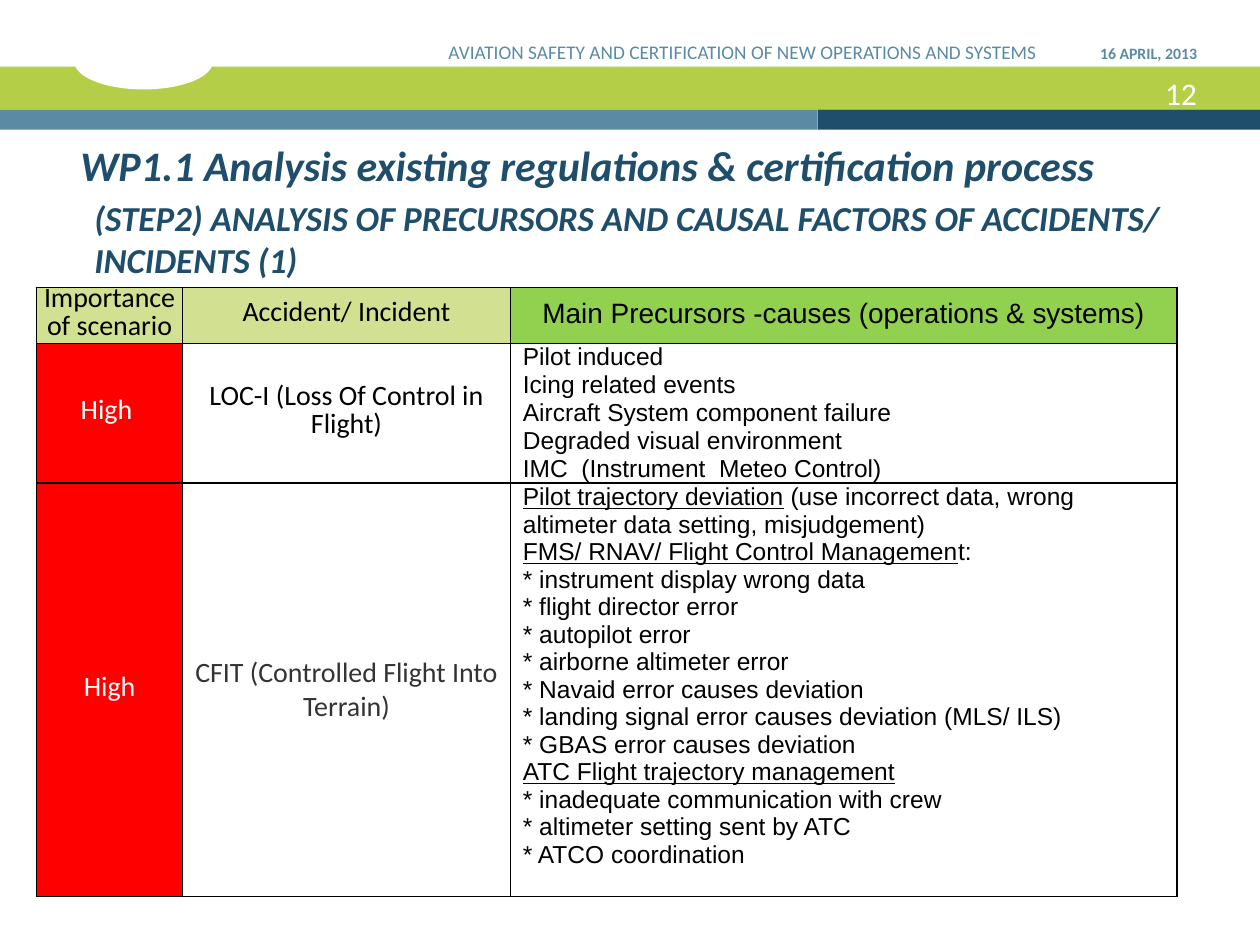
from lxml.etree import SubElement
from pptx import Presentation
from pptx.dml.color import RGBColor
from pptx.enum.shapes import MSO_SHAPE
from pptx.enum.text import MSO_ANCHOR, PP_ALIGN
from pptx.oxml.ns import qn
from pptx.util import Inches, Pt

THEME = {
    "colors": {"lime": "B5CE48", "navy": "1E4E6B", "steel": "5B8AA5", "white": "FFFFFF",
               "pale": "D2E191", "green": "92D050", "red": "FF0000", "black": "000000",
               "grey": "333333"},
    "styles": {
        "title": {"size": 24, "name": "Calibri", "color": "navy", "bold": True, "italic": True},
        "subtitle": {"size": 20, "name": "Calibri", "color": "navy", "bold": True, "italic": True},
        "number": {"size": 18, "name": "Calibri", "color": "white"},
        "date": {"size": 9, "name": "Calibri", "color": "steel", "bold": True},
        "event": {"size": 11, "name": "Calibri", "color": "steel"},
        "label": {"size": 16, "name": "Calibri", "color": "black"},
        "heading": {"size": 16, "name": "Arial", "color": "black"},
        "rating": {"size": 16, "name": "Calibri", "color": "white"},
        "muted": {"size": 16, "name": "Calibri", "color": "grey"},
        "cause": {"size": 14, "name": "Arial", "color": "black"},
        "topic": {"size": 14, "name": "Arial", "color": "black", "underline": True},
    },
}

BANDS = [
    (MSO_SHAPE.RECTANGLE, "lime", (0, 0.53, 10, 0.34)),
    (MSO_SHAPE.RECTANGLE, "navy", (6.49, 0.87, 3.51, 0.16)),
    (MSO_SHAPE.RECTANGLE, "steel", (0, 0.87, 6.49, 0.16)),
    (MSO_SHAPE.OVAL, "white", (0.59, 0.27, 1.1, 0.44)),
]

HEADER_FRAME = {"vertical_anchor": MSO_ANCHOR.BOTTOM, "margin_right": 0}
TEXTS = [
    ("WP1.1 Analysis existing regulations & certification process", "title",
     (0.54, 1.11, 9, 0.45), PP_ALIGN.LEFT, {"vertical_anchor": MSO_ANCHOR.BOTTOM}),
    ("12", "number", (8.67, 0.54, 0.83, 0.4), PP_ALIGN.RIGHT, HEADER_FRAME),
    ("16 APRIL, 2013", "date", (8.31, 0.05, 1.19, 0.5), PP_ALIGN.RIGHT, HEADER_FRAME),
    ("AVIATION SAFETY AND CERTIFICATION OF NEW OPERATIONS AND SYSTEMS", "event",
     (2.95, 0.05, 5.28, 0.5), PP_ALIGN.RIGHT, HEADER_FRAME),
    ("(STEP2) ANALYSIS OF PRECURSORS AND CAUSAL FACTORS OF ACCIDENTS/ INCIDENTS (1)",
     "subtitle", (0.65, 1.51, 8.78, 0.77), PP_ALIGN.LEFT, {}),
]

LOSS_CAUSES = """Pilot induced
Icing related events
Aircraft System component failure
Degraded visual environment
IMC  (Instrument  Meteo Control)"""
FLIGHT_CAUSES = """t:
* instrument display wrong data
* flight director error
* autopilot error
* airborne altimeter error
* Navaid error causes deviation
* landing signal error causes deviation (MLS/ ILS)
* GBAS error causes deviation"""
CONTROL_CAUSES = """* inadequate communication with crew
* altimeter setting sent by ATC
* ATCO coordination"""

TABLE_AT = (0.29, 2.28)
COLUMNS = [1.16, 2.6, 5.29]
ROWS = [0.44, 1.11, 3.28]
CENTRED = {"alignment": PP_ALIGN.CENTER, "line_spacing": Pt(16)}
CELLS = [
    [("pale", CENTRED, [[("Importance of scenario", "label")]]),
     ("pale", CENTRED, [[("Accident/ Incident", "label")]]),
     ("green", CENTRED, [[("Main Precursors -causes (operations & systems)", "heading")]])],
    [("red", CENTRED, [[("High ", "rating")]]),
     (None, CENTRED, [[("LOC-I (Loss Of Control in Flight)", "label")]]),
     (None, {"line_spacing": Pt(16)}, [[(LOSS_CAUSES, "cause")]])],
    [("red", CENTRED, [[("High", "rating")]]),
     (None, {"alignment": PP_ALIGN.CENTER},
      [[("CFIT (Controlled Flight Into Terrain)", "muted")]]),
     (None, {}, [
         [("Pilot trajectory deviation", "topic"),
          (" (use incorrect data, wrong altimeter data setting, misjudgement)\n", "cause"),
          ("FMS/ RNAV/ Flight Control Managemen", "topic"),
          (FLIGHT_CAUSES, "cause")],
         [("ATC Flight trajectory management\n", "topic"),
          (CONTROL_CAUSES, "cause")]])],
]


def color_of(name):
    return RGBColor.from_string(THEME["colors"][name])


def apply(target, values):
    for name, value in values.items():
        setattr(target, name, value)


def write_spans(para, text, style):
    values = dict(THEME["styles"][style])
    color = color_of(values.pop("color"))
    values["size"] = Pt(values["size"])
    for index, line in enumerate(text.split("\n")):
        if index:
            para.add_line_break()
        if line:
            span = para.add_run()
            span.text = line
            apply(span.font, values)
            span.font.color.rgb = color


def add_band(page, kind, color, place):
    band = page.shapes.add_shape(kind, *map(Inches, place))
    band.shadow.inherit = False
    band.fill.solid()
    band.fill.fore_color.rgb = color_of(color)
    band.line.fill.background()


def add_text(page, text, style, place, alignment, frame):
    box = page.shapes.add_textbox(*map(Inches, place))
    apply(box.text_frame, {"word_wrap": True, **frame})
    para = box.text_frame.paragraphs[0]
    para.alignment = alignment
    write_spans(para, text, style)


def add_borders(cell):
    properties = cell._tc.get_or_add_tcPr()
    for side in ("a:lnL", "a:lnR", "a:lnT", "a:lnB"):
        line = SubElement(properties, qn(side), w=str(Pt(1)))
        fill = SubElement(line, qn("a:solidFill"))
        SubElement(fill, qn("a:srgbClr"), val=THEME["colors"]["black"])


def fill_cell(cell, color, layout, paragraphs):
    centred = "alignment" in layout
    apply(cell, {"margin_left": Inches(0.01), "margin_right": Inches(0.01),
                 "margin_top": 0, "margin_bottom": 0,
                 "vertical_anchor": MSO_ANCHOR.MIDDLE if centred else MSO_ANCHOR.TOP})
    add_borders(cell)
    if color:
        cell.fill.solid()
        cell.fill.fore_color.rgb = color_of(color)
    else:
        cell.fill.background()
    frame = cell.text_frame
    for index, spans in enumerate(paragraphs):
        para = frame.add_paragraph() if index else frame.paragraphs[0]
        apply(para, layout)
        if not centred:
            para._p.get_or_add_pPr().set("marL", str(Inches(0.09)))
        for text, style in spans:
            write_spans(para, text, style)


def add_causes_table(page):
    place = (*TABLE_AT, sum(COLUMNS), sum(ROWS))
    table = page.shapes.add_table(len(ROWS), len(COLUMNS), *map(Inches, place)).table
    apply(table, {"first_row": False, "horz_banding": False})
    for column, width in zip(table.columns, COLUMNS):
        column.width = Inches(width)
    for row, height, contents in zip(table.rows, ROWS, CELLS):
        row.height = Inches(height)
        for cell, content in zip(row.cells, contents):
            fill_cell(cell, *content)


def main():
    """Build the slide on precursors and causes of accidents."""
    deck = Presentation()
    apply(deck, {"slide_width": Inches(10), "slide_height": Inches(7.5)})
    page = deck.slides.add_slide(deck.slide_layouts[6])
    for band in BANDS:
        add_band(page, *band)
    for text in TEXTS:
        add_text(page, *text)
    add_causes_table(page)
    deck.save("out.pptx")


if __name__ == "__main__":
    main()
